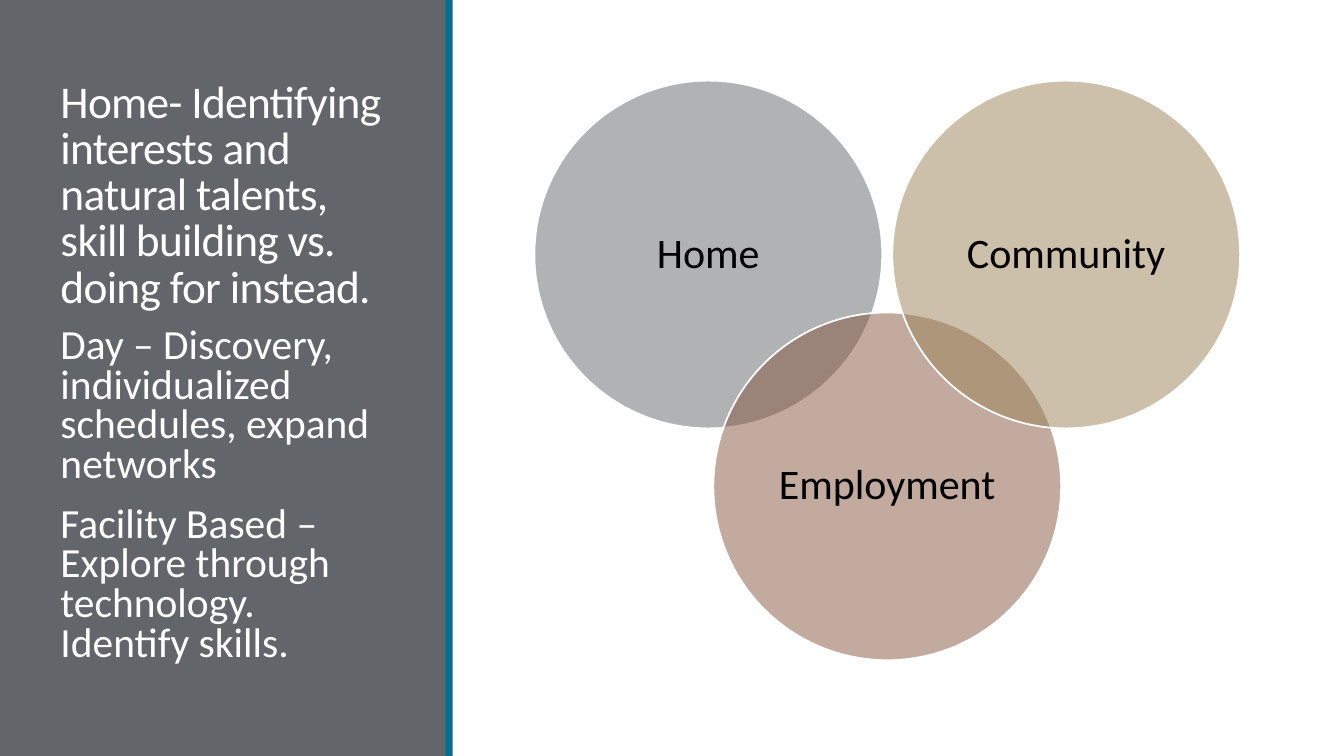
import pptx
import pptx.util
import pptx.dml.color
import pptx.enum.shapes
import pptx.enum.text
import pptx.oxml
import pptx.oxml.ns

# Content
TITLE = "Home- Identifying interests and natural talents, skill building vs. doing for instead."
BODY = [
    "Day – Discovery, individualized schedules, expand networks",
    "Facility Based – Explore through technology. Identify skills.",
]
# label, fill, column, row
CIRCLES = [
    ("Home", "62666A", 0, 0),
    ("Employment", "865640", 1, 1),
    ("Community", "9B8357", 2, 0),
]
# left, width, fill
PANELS = [(0, 4.43, "62666A"), (4.42, 0.07, "006F95")]

WIDTH, HEIGHT = 13.33, 7.5
MARGIN, TEXT_WIDTH = 0.5, 3.5
VENN_LEFT, VENN_TOP = 5.3, 0.8
DIAMETER, COLUMN, ROW = 3.45, 1.775, 2.3

Inches, Pt = pptx.util.Inches, pptx.util.Pt
SHAPE = pptx.enum.shapes.MSO_SHAPE
ANCHOR = pptx.enum.text.MSO_ANCHOR


def rgb(color):
    return pptx.dml.color.RGBColor.from_string(color)


def add_shape(s, kind, left, top, width, height, fill):
    sp = s.shapes.add_shape(kind, *map(Inches, (left, top, width, height)))
    sp.shadow.inherit = False
    sp.fill.solid()
    sp.fill.fore_color.rgb = rgb(fill)
    sp.line.fill.background()
    return sp


def set_alpha(sp, percent):
    color = sp.fill._xPr.find(".//" + pptx.oxml.ns.qn("a:srgbClr"))
    alpha = pptx.oxml.parse_xml(f'<a:alpha {pptx.oxml.ns.nsdecls("a")} val="{percent * 1000}"/>')
    color.append(alpha)


def place(sp, top, height, anchor):
    sp.left, sp.top = Inches(MARGIN), Inches(top)
    sp.width, sp.height = Inches(TEXT_WIDTH), Inches(height)
    sp.text_frame.word_wrap = True
    sp.text_frame.auto_size = pptx.enum.text.MSO_AUTO_SIZE.NONE
    sp.text_frame.vertical_anchor = anchor


def style(p, size, color, spacing):
    p.line_spacing = spacing
    for r in p.runs:
        r.font.name = "Calibri"
        r.font.size = Pt(size)
        r.font.bold = False
        r.font.color.rgb = rgb(color)


prs = pptx.Presentation()
prs.slide_width, prs.slide_height = Inches(WIDTH), Inches(HEIGHT)
s = prs.slides.add_slide(prs.slide_layouts.get_by_name("Content with Caption"))
title, content, body = s.placeholders
content.element.getparent().remove(content.element)

# Side panel and accent bar, behind the text
for i, (left, width, fill) in enumerate(PANELS):
    panel = add_shape(s, SHAPE.RECTANGLE, left, 0, width, HEIGHT, fill)
    title.element.getparent().insert(2 + i, panel.element)

# Title
place(title, 0.65, 2.5, ANCHOR.BOTTOM)
title.text_frame.text = TITLE
p = title.text_frame.paragraphs[0]
style(p, 32.4, "FFFFFF", 0.85)
p.runs[0].font._element.set("spc", "-50")

# Body
place(body, 3.2, 3.7, ANCHOR.TOP)
body.text_frame.text = "\n".join(BODY)
for p in body.text_frame.paragraphs:
    style(p, 29.6, "FFFFFF", 0.8)
    p.space_before, p.space_after = Pt(12), Pt(2)

# Overlapping circles
for label, fill, column, row in CIRCLES:
    sp = add_shape(s, SHAPE.OVAL, VENN_LEFT + column * COLUMN, VENN_TOP + row * ROW,
                   DIAMETER, DIAMETER, fill)
    set_alpha(sp, 50)
    sp.line.color.rgb = rgb("FFFFFF")
    sp.line.width = Pt(1.25)
    tf = sp.text_frame
    tf.word_wrap = False
    tf.vertical_anchor = ANCHOR.MIDDLE
    tf.text = label
    tf.paragraphs[0].alignment = pptx.enum.text.PP_ALIGN.CENTER
    style(tf.paragraphs[0], 30, "000000", 0.9)

prs.save("out.pptx")
